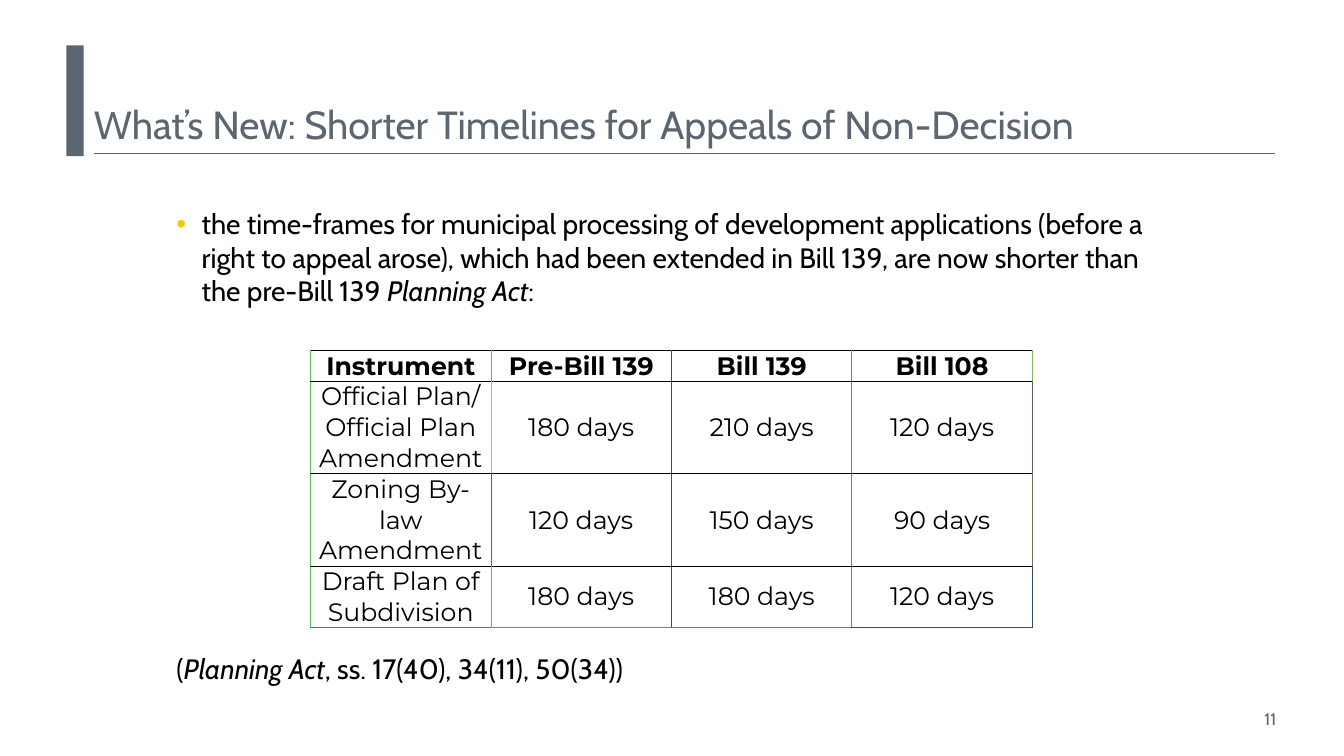
from dataclasses import dataclass

from lxml.etree import SubElement
from pptx import Presentation
from pptx.dml.color import RGBColor
from pptx.enum.shapes import MSO_CONNECTOR, MSO_SHAPE
from pptx.enum.text import MSO_ANCHOR, MSO_AUTO_SIZE, PP_ALIGN
from pptx.oxml.ns import qn
from pptx.slide import Slide
from pptx.table import _Cell
from pptx.text.text import TextFrame, _Paragraph
from pptx.util import Inches, Pt


@dataclass(frozen=True)
class Theme:
    slate: str = "5C6671"
    gold: str = "FFC709"
    black: str = "000000"
    white: str = "FFFFFF"
    text_font: str = "Cabin"
    table_font: str = "Montserrat"
    title_size: int = 28
    body_size: int = 20
    table_size: int = 18
    number_size: int = 12
    rule_width: float = 0.5
    border_width: float = 0.75


@dataclass(frozen=True)
class Run:
    text: str
    italic: bool = False


@dataclass(frozen=True)
class TextBlock:
    left: float
    top: float
    width: float
    height: float
    runs: tuple[Run, ...]
    size: int
    color: str
    bulleted: bool = False
    align: PP_ALIGN = PP_ALIGN.LEFT
    anchor: MSO_ANCHOR = MSO_ANCHOR.TOP


@dataclass(frozen=True)
class TimelineRow:
    cells: tuple[str, ...]
    lines: int
    edges: tuple[str, ...]


THEME = Theme()
TITLE = "What’s New: Shorter Timelines for Appeals of Non-Decision"
BLOCKS = (
    TextBlock(1.75, 2.05, 9.84, 1.1, (
        Run("the time-frames for municipal processing of development applications "
            "(before a right to appeal arose), which had been extended in Bill 139, "
            "are now shorter than the pre-Bill 139 "),
        Run("Planning Act", True),
        Run(":"),
    ), THEME.body_size, THEME.black, bulleted=True),
    TextBlock(1.75, 6.46, 9.84, 0.4, (
        Run("("),
        Run("Planning Act", True),
        Run(", ss. 17(40), 34(11), 50(34))"),
    ), THEME.body_size, THEME.black),
    TextBlock(10.2, 6.83, 2.46, 0.4, (Run("11"),), THEME.number_size, THEME.slate,
              align=PP_ALIGN.RIGHT, anchor=MSO_ANCHOR.BOTTOM),
)
ROWS = (
    TimelineRow(("Instrument", "Pre-Bill 139", "Bill 139", "Bill 108"), 1,
                ("50C25C", "C0885C", "205C5C", "887E5C", "80B95C")),
    TimelineRow(("Official Plan/ Official Plan Amendment", "180 days", "210 days", "120 days"), 3,
                ("50C25C", "E8A85C", "205C5C", "887E5C", "70545C")),
    TimelineRow(("Zoning By-law Amendment", "120 days", "150 days", "90 days"), 3,
                ("50C25C", "98475C", "205C5C", "887E5C", "786D5C")),
    TimelineRow(("Draft Plan of Subdivision", "180 days", "180 days", "120 days"), 2,
                ("50C25C", "C0885C", "205C5C", "887E5C", "304C5C")),
)
BOTTOM_EDGES = ("786D5C", "708D5C", "C8505C", "404E5C")
TABLE_LEFT, TABLE_TOP = 3.08, 3.48
COLUMN_WIDTH, LINE_HEIGHT = 1.79, 0.3


def rgb(color: str) -> RGBColor:
    return RGBColor.from_string(color)


def style_runs(p: _Paragraph, font: str, size: int, color: str) -> None:
    for r in p.runs:
        r.font.name = font
        r.font.size = Pt(size)
        r.font.color.rgb = rgb(color)


def prepare_frame(tf: TextFrame, anchor: MSO_ANCHOR) -> None:
    tf.word_wrap = True
    tf.auto_size = MSO_AUTO_SIZE.NONE
    tf.vertical_anchor = anchor
    tf.margin_left = tf.margin_top = tf.margin_right = tf.margin_bottom = 0


def add_bullet(p: _Paragraph) -> None:
    pPr = p._p.get_or_add_pPr()
    pPr.set("marL", str(Inches(0.25)))
    pPr.set("indent", str(Inches(-0.25)))
    SubElement(SubElement(pPr, qn("a:buClr")), qn("a:srgbClr"), val=THEME.gold)
    SubElement(pPr, qn("a:buFont"), typeface="Arial")
    SubElement(pPr, qn("a:buChar"), char="•")


def add_title(s: Slide) -> None:
    sp = s.shapes.title
    sp.left, sp.top, sp.width, sp.height = (Inches(v) for v in (0.93, 0.25, 11.73, 1.22))
    tf = sp.text_frame
    tf.text = TITLE
    prepare_frame(tf, MSO_ANCHOR.BOTTOM)
    p = tf.paragraphs[0]
    p.alignment = PP_ALIGN.LEFT
    p.line_spacing = 0.9
    style_runs(p, THEME.text_font, THEME.title_size, THEME.slate)


def add_title_marks(s: Slide) -> None:
    rule = s.shapes.add_connector(MSO_CONNECTOR.STRAIGHT, Inches(0.93), Inches(1.52),
                                  Inches(12.65), Inches(1.52))
    rule.line.color.rgb = rgb(THEME.slate)
    rule.line.width = Pt(THEME.rule_width)
    SubElement(rule._element.spPr, qn("a:effectLst"))
    bar = s.shapes.add_shape(MSO_SHAPE.RECTANGLE, Inches(0.66), Inches(0.45),
                             Inches(0.17), Inches(1.1))
    bar.shadow.inherit = False
    bar.fill.solid()
    bar.fill.fore_color.rgb = rgb(THEME.slate)
    bar.line.fill.background()


def add_text(s: Slide, block: TextBlock) -> None:
    sp = s.shapes.add_textbox(Inches(block.left), Inches(block.top),
                              Inches(block.width), Inches(block.height))
    tf = sp.text_frame
    prepare_frame(tf, block.anchor)
    p = tf.paragraphs[0]
    p.alignment = block.align
    if block.bulleted:
        add_bullet(p)
    for run in block.runs:
        r = p.add_run()
        r.text = run.text
        r.font.italic = run.italic
    style_runs(p, THEME.text_font, block.size, block.color)


def set_borders(cell: _Cell, left: str, right: str, top: str, bottom: str) -> None:
    tcPr = cell._tc.get_or_add_tcPr()
    for side, color in zip("LRTB", (left, right, top, bottom)):
        ln = SubElement(tcPr, qn(f"a:ln{side}"), w=str(Pt(THEME.border_width)))
        SubElement(SubElement(ln, qn("a:solidFill")), qn("a:srgbClr"), val=color)


def add_timeline_table(s: Slide) -> None:
    columns = len(ROWS[0].cells)
    height = LINE_HEIGHT * sum(row.lines for row in ROWS)
    table = s.shapes.add_table(len(ROWS), columns, Inches(TABLE_LEFT), Inches(TABLE_TOP),
                               Inches(COLUMN_WIDTH * columns), Inches(height)).table
    table.horz_banding = False
    for column in table.columns:
        column.width = Inches(COLUMN_WIDTH)
    for i, row in enumerate(ROWS):
        table.rows[i].height = Inches(LINE_HEIGHT * row.lines)
        for j, text in enumerate(row.cells):
            cell = table.cell(i, j)
            bottom = BOTTOM_EDGES[j] if i == len(ROWS) - 1 else THEME.black
            set_borders(cell, row.edges[j], row.edges[j + 1], THEME.black, bottom)
            cell.fill.solid()
            cell.fill.fore_color.rgb = rgb(THEME.white)
            cell.vertical_anchor = MSO_ANCHOR.MIDDLE
            cell.margin_left = cell.margin_right = cell.margin_top = cell.margin_bottom = 0
            cell.text_frame.text = text
            p = cell.text_frame.paragraphs[0]
            p.alignment = PP_ALIGN.CENTER
            style_runs(p, THEME.table_font, THEME.table_size, THEME.black)
            p.runs[0].font.bold = i == 0


def main() -> None:
    """Build the slide on shorter appeal timelines."""
    prs = Presentation()
    prs.slide_width, prs.slide_height = Inches(13.33), Inches(7.5)
    s = prs.slides.add_slide(prs.slide_layouts[5])
    add_title_marks(s)
    add_title(s)
    for block in BLOCKS:
        add_text(s, block)
    add_timeline_table(s)
    prs.save("out.pptx")


if __name__ == "__main__":
    main()
